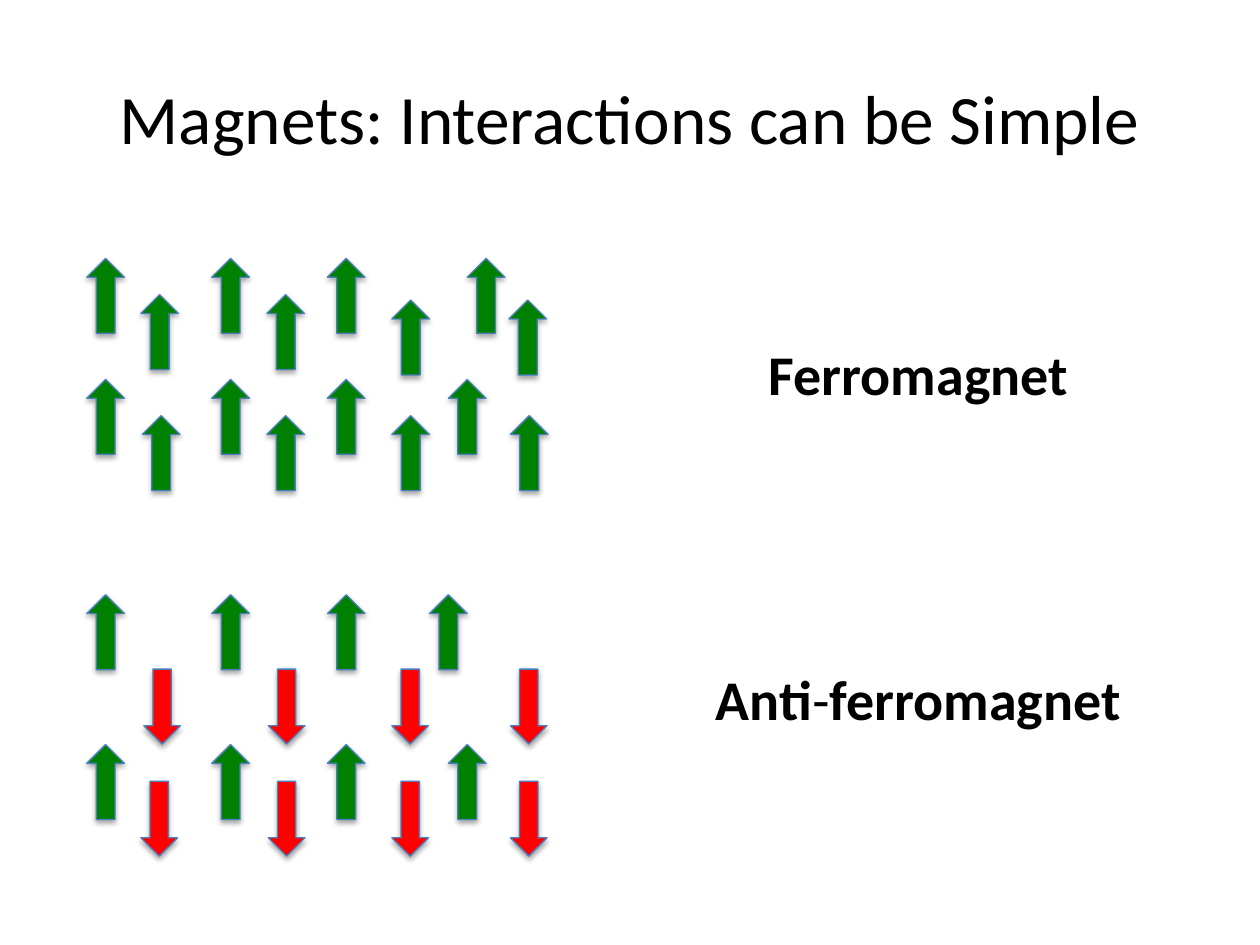
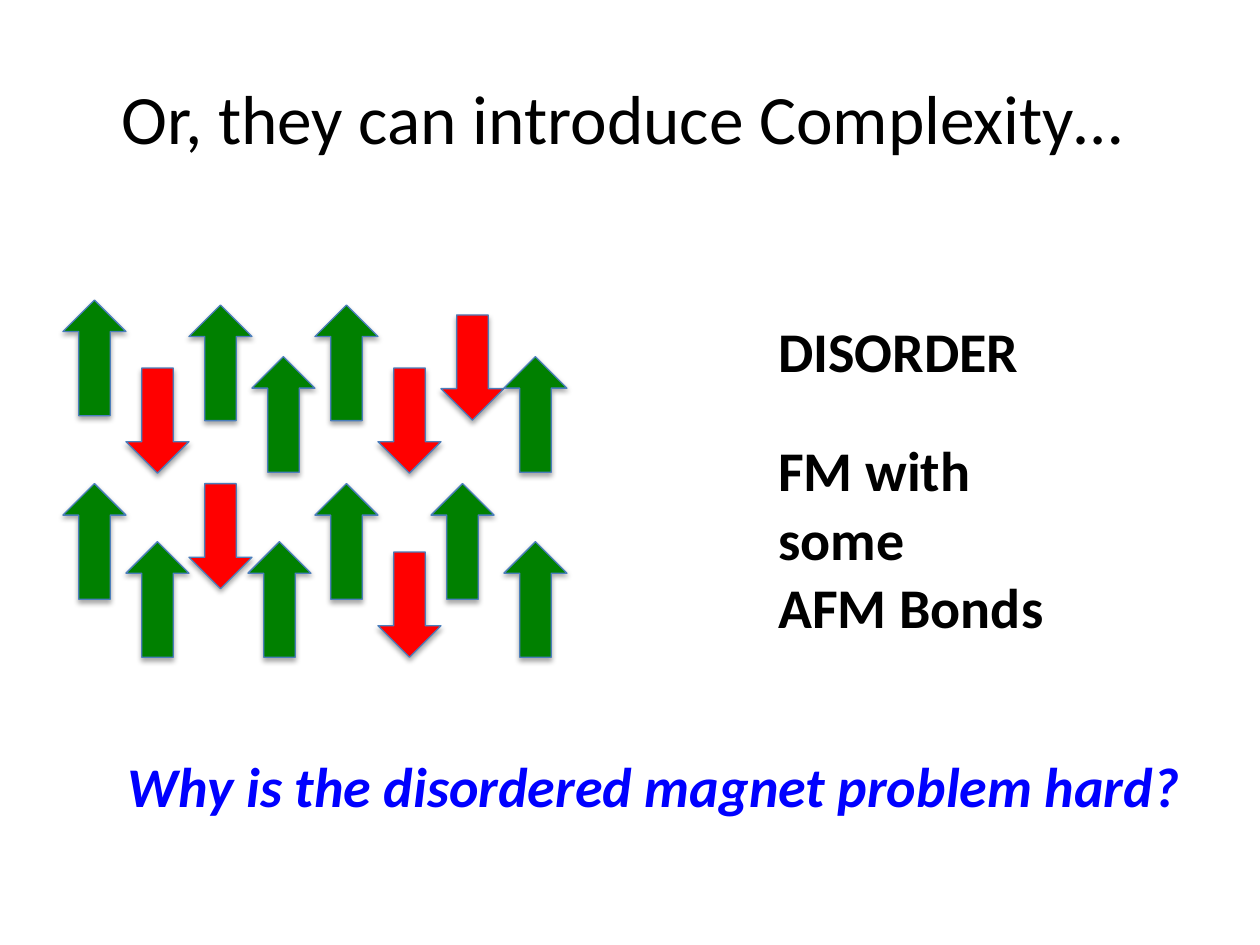
from dataclasses import dataclass

from lxml import etree
from pptx import Presentation
from pptx.dml.color import RGBColor
from pptx.enum.shapes import MSO_SHAPE as Preset
from pptx.enum.text import MSO_ANCHOR as Anchor, PP_ALIGN as Align
from pptx.oxml.ns import qn
from pptx.util import Cm, Pt

FONT = "Calibri"
BLACK, BLUE = "000000", "0000FF"
UP_GREEN, DOWN_RED, OUTLINE = "008000", "FF0000", "4B7EBC"
BODY_SIZE = 32
BLANK_LAYOUT = 6


@dataclass(frozen=True)
class Spin:
    preset: Preset
    color: str
    width: float
    height: float


@dataclass(frozen=True)
class SpinRow:
    spin: Spin
    top: float
    lefts: tuple[float, ...]


SMALL_UP = Spin(Preset.UP_ARROW, UP_GREEN, 0.76, 1.51)
SMALL_DOWN = Spin(Preset.DOWN_ARROW, DOWN_RED, 0.74, 1.51)
LARGE_UP = Spin(Preset.UP_ARROW, UP_GREEN, 1.27, 2.33)
LARGE_DOWN = Spin(Preset.DOWN_ARROW, DOWN_RED, 1.27, 2.12)

MAIN_COLUMNS = (1.75, 4.27, 6.6)
FERROMAGNET = (
    SpinRow(SMALL_UP, 5.21, (*MAIN_COLUMNS, 9.42)),
    SpinRow(SMALL_UP, 5.94, (2.84, 5.38)),
    SpinRow(SMALL_UP, 6.05, (7.9, 10.26)),
    SpinRow(SMALL_UP, 7.65, (*MAIN_COLUMNS, 9.04)),
    SpinRow(SMALL_UP, 8.38, (2.87, 5.38, 7.9, 10.29)),
)
ANTIFERROMAGNET = (
    SpinRow(SMALL_DOWN, 15.75, (2.84, 5.41, 7.9, 10.29)),
    SpinRow(SMALL_DOWN, 13.49, (2.9, 5.41, 7.9, 10.29)),
    SpinRow(SMALL_UP, 11.99, (*MAIN_COLUMNS, 8.66)),
    SpinRow(SMALL_UP, 15.01, (*MAIN_COLUMNS, 9.04)),
)


def grid(*columns: int) -> tuple[float, ...]:
    """Left edges of the numbered columns, each as wide as a large spin."""
    return tuple(LARGE_UP.width * column for column in columns)


DISORDERED = (
    SpinRow(LARGE_DOWN, 7.42, grid(2, 6)),
    SpinRow(LARGE_DOWN, 6.35, grid(7)),
    SpinRow(LARGE_DOWN, 9.75, grid(3)),
    SpinRow(LARGE_DOWN, 11.13, grid(6)),
    SpinRow(LARGE_UP, 6.05, grid(1)),
    SpinRow(LARGE_UP, 6.15, grid(3, 5)),
    SpinRow(LARGE_UP, 7.19, grid(4, 8)),
    SpinRow(LARGE_UP, 9.75, (*grid(1, 5), 8.69)),
    SpinRow(LARGE_UP, 10.92, (*grid(2, 8), 5.0)),
)


def rgb(color: str) -> RGBColor:
    return RGBColor.from_string(color)


def write_text(paragraph, text: str, *, size: float = BODY_SIZE, color: str = BLACK,
               bold: bool = False, italic: bool = False, align: Align = Align.LEFT) -> None:
    """Append a formatted run to the paragraph."""
    paragraph.alignment = align
    run = paragraph.add_run()
    run.text = text
    font = run.font
    font.name, font.size, font.bold, font.italic = FONT, Pt(size), bold, italic
    font.color.rgb = rgb(color)


def add_text_box(slide, left: float, top: float, width: float, height: float,
                 text: str, anchor: Anchor = Anchor.TOP, **text_format) -> None:
    frame = slide.shapes.add_textbox(Cm(left), Cm(top), Cm(width), Cm(height)).text_frame
    frame.word_wrap = True
    frame.vertical_anchor = anchor
    write_text(frame.paragraphs[0], text, **text_format)


def add_titled_slide(presentation, title: str):
    slide = presentation.slides.add_slide(presentation.slide_layouts[BLANK_LAYOUT])
    add_text_box(slide, 1.27, 0.76, 22.86, 3.18, title,
                 anchor=Anchor.MIDDLE, size=39.6, align=Align.CENTER)
    return slide


def add_label_table(slide, left: float, top: float, width: float, height: float,
                    top_margins: tuple[float, ...]) -> list:
    """Add a one-column table without fills and return its cells."""
    table = slide.shapes.add_table(len(top_margins), 1, Cm(left), Cm(top),
                                   Cm(width), Cm(height)).table
    table.first_row = table.horz_banding = False
    cells = list(table.iter_cells())
    for cell, margin in zip(cells, top_margins):
        cell.fill.background()
        cell.margin_top = Cm(margin)
    return cells


def add_soft_shadow(shape) -> None:
    shape.shadow.inherit = False
    effects = shape.element.spPr.find(qn("a:effectLst"))
    shadow = etree.SubElement(effects, qn("a:outerShdw"), blurRad=str(Pt(3.1)),
                              dist=str(Pt(1.8)), dir="5400000", rotWithShape="0")
    color = etree.SubElement(shadow, qn("a:srgbClr"), val=BLACK)
    etree.SubElement(color, qn("a:alpha"), val="35000")


def add_spins(slide, rows: tuple[SpinRow, ...]) -> None:
    for row in rows:
        spin = row.spin
        for left in row.lefts:
            shape = slide.shapes.add_shape(spin.preset, Cm(left), Cm(row.top),
                                           Cm(spin.width), Cm(spin.height))
            shape.fill.solid()
            shape.fill.fore_color.rgb = rgb(spin.color)
            shape.line.color.rgb = rgb(OUTLINE)
            shape.line.width = Pt(0.75)
            add_soft_shadow(shape)


def build_simple_slide(presentation) -> None:
    slide = add_titled_slide(presentation, "Magnets: Interactions can be Simple")
    ferromagnet, antiferromagnet = add_label_table(
        slide, 12.9, 4.45, 11.23, 13.6, top_margins=(2.45, 2.19))
    write_text(ferromagnet.text_frame.paragraphs[0], "Ferromagnet",
               bold=True, align=Align.CENTER)
    for text, bold in (("Anti", True), ("-", False), ("ferromagnet", True)):
        write_text(antiferromagnet.text_frame.paragraphs[0], text,
                   bold=bold, align=Align.CENTER)
    add_spins(slide, FERROMAGNET + ANTIFERROMAGNET)


def build_complex_slide(presentation) -> None:
    slide = add_titled_slide(presentation, "Or, they can introduce Complexity… ")
    [cell] = add_label_table(slide, 11.63, 5.28, 10.59, 8.26, top_margins=(1.16,))
    cell.margin_left = Cm(4.06)
    frame = cell.text_frame
    write_text(frame.paragraphs[0], "DISORDER", bold=True)
    for text, space_before in (("FM with some", 29), ("AFM Bonds", 0)):
        paragraph = frame.add_paragraph()
        paragraph.space_before = Pt(space_before)
        write_text(paragraph, text, bold=True)
    add_spins(slide, DISORDERED)
    add_text_box(slide, 2.33, 15.03, 22.43, 1.62,
                 "Why is the disordered magnet problem hard?",
                 color=BLUE, bold=True, italic=True)


def main() -> None:
    presentation = Presentation()
    presentation.slide_width, presentation.slide_height = Cm(25.4), Cm(19.05)
    build_simple_slide(presentation)
    build_complex_slide(presentation)
    presentation.save("out.pptx")


if __name__ == "__main__":
    main()
